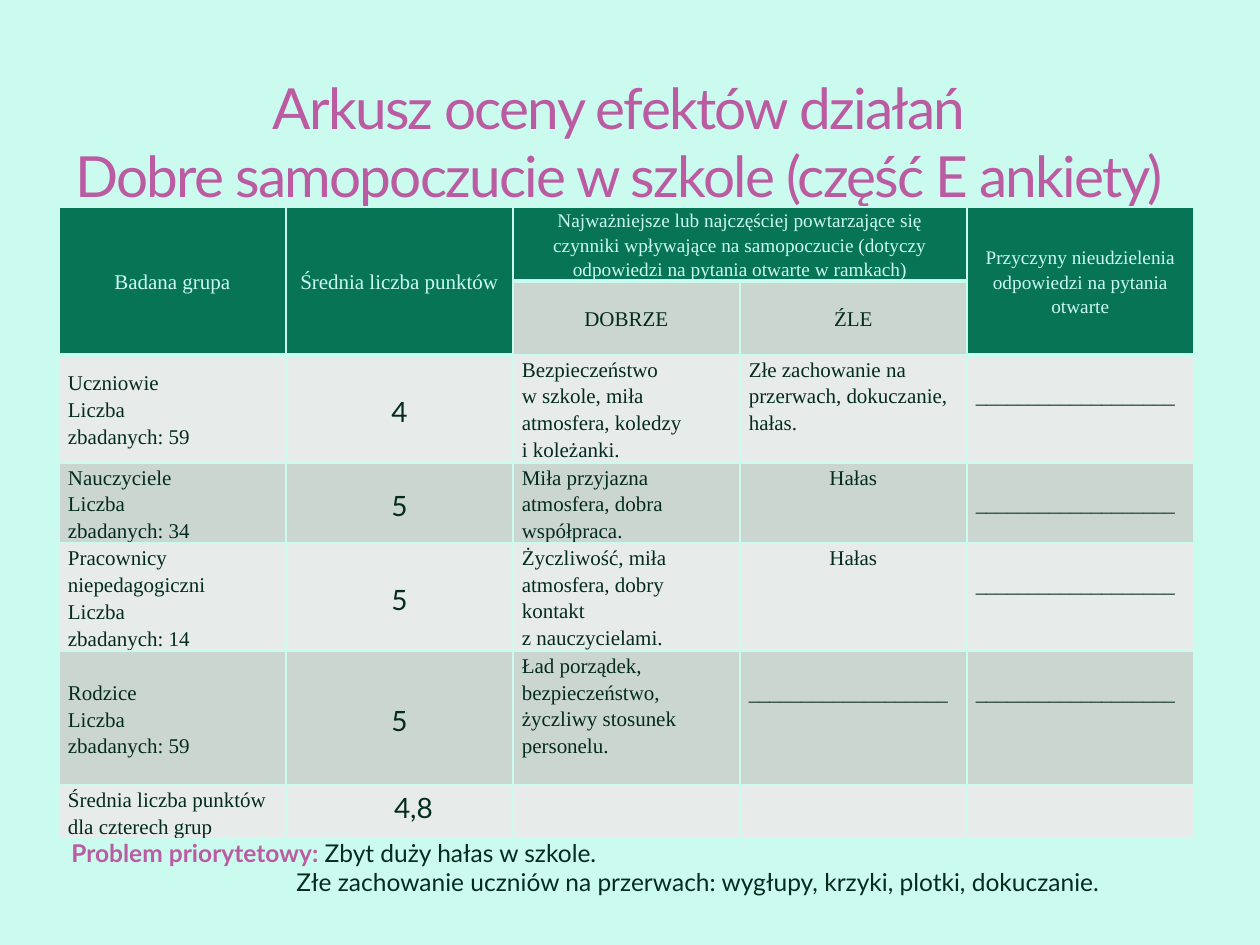
import pptx
import pptx.dml.color
import pptx.enum.text
import pptx.oxml
import pptx.oxml.ns
import pptx.util

RGBColor = pptx.dml.color.RGBColor
PP_ALIGN = pptx.enum.text.PP_ALIGN
MSO_ANCHOR = pptx.enum.text.MSO_ANCHOR
Pt = pptx.util.Pt

MINT = RGBColor(0xCB, 0xFB, 0xEE)
GREEN = RGBColor(0x08, 0x74, 0x56)
INK = RGBColor(0x03, 0x2B, 0x1F)
PINK = RGBColor(0xBB, 0x5B, 0xA2)
LIGHT = RGBColor(0xE7, 0xEB, 0xE9)
DARK = RGBColor(0xCC, 0xD6, 0xD1)

SERIF = "Times New Roman"
SANS = "Lato"
EMU_PER_PX = 914400 // 126

COLUMN_WIDTH = 227
ROW_HEIGHTS = [73, 74, 108, 80, 108, 134, 54]
CELL_INSET = 9
LINE_HEIGHT = 27
NO_ANSWER = "_" * 19

SURVEY = [
    ("Uczniowie\vLiczba\vzbadanych: 59", "4",
     "Bezpieczeństwo\vw szkole, miła atmosfera, koledzy\vi koleżanki.",
     "Złe zachowanie na przerwach, dokuczanie, hałas."),
    ("Nauczyciele\vLiczba\vzbadanych: 34", "5",
     "Miła przyjazna atmosfera, dobra współpraca.", "Hałas"),
    ("Pracownicy niepedagogiczni\vLiczba\vzbadanych: 14", "5",
     "Życzliwość, miła atmosfera, dobry kontakt\vz nauczycielami.", "Hałas"),
    ("Rodzice\vLiczba\vzbadanych: 59", "5",
     "Ład porządek, bezpieczeństwo, życzliwy stosunek personelu.", NO_ANSWER),
]


def px(length):
    return pptx.util.Emu(length * EMU_PER_PX)


def add_title(slide, text):
    title = slide.shapes.title
    title.left, title.top, title.width, title.height = px(59), px(49), px(1134), px(160)
    frame = title.text_frame
    frame.word_wrap = True
    frame.auto_size = pptx.enum.text.MSO_AUTO_SIZE.NONE
    frame.vertical_anchor = MSO_ANCHOR.BOTTOM
    frame.margin_left = frame.margin_top = frame.margin_bottom = 0
    frame.margin_right = px(14)
    heading = frame.paragraphs[0]
    heading.text = text
    heading.alignment = PP_ALIGN.CENTER
    heading.font.name = SANS
    heading.font.size = Pt(32.4)
    heading.font.color.rgb = PINK
    for run in heading.runs:
        run.font._element.set("spc", "-100")


def set_borders(cell, bottom=1):
    properties = cell._tc.get_or_add_tcPr()
    sides = [("lnL", 1), ("lnR", 1), ("lnT", 1), ("lnB", bottom)]
    for position, (side, points) in enumerate(sides):
        properties.insert(position, pptx.oxml.parse_xml(
            f'<a:{side} {pptx.oxml.ns.nsdecls("a")} w="{Pt(points)}">'
            f'<a:solidFill><a:srgbClr val="{MINT}"/></a:solidFill></a:{side}>'))


def fill_cell(cell, color):
    cell.fill.solid()
    cell.fill.fore_color.rgb = color
    cell.margin_left = cell.margin_right = px(CELL_INSET)
    cell.margin_top = cell.margin_bottom = 0


def write_cell(cell, text, size=12, font=SERIF, color=INK,
               align=PP_ALIGN.LEFT, anchor=MSO_ANCHOR.MIDDLE):
    cell.vertical_anchor = anchor
    entry = cell.text_frame.paragraphs[0]
    entry.text = text
    entry.alignment = align
    entry.line_spacing = 1.15
    entry.space_after = Pt(10)
    entry.font.name = font
    entry.font.size = Pt(size)
    for run in entry.runs:
        run.font.color.rgb = color


def write_factor(cell, text):
    centered = text == "Hałas"
    write_cell(cell, text, align=PP_ALIGN.CENTER if centered else PP_ALIGN.LEFT,
               anchor=MSO_ANCHOR.TOP)
    if text == NO_ANSWER:
        cell.margin_top = px(LINE_HEIGHT)


def write_header(table):
    headings = [
        (0, "Badana grupa", 12),
        (1, "Średnia liczba punktów", 12),
        (2, "Najważniejsze lub najczęściej powtarzające się czynniki wpływające "
            "na samopoczucie (dotyczy odpowiedzi na pytania otwarte w ramkach)", 11),
        (4, "Przyczyny nieudzielenia odpowiedzi na pytania otwarte", 11),
    ]
    for column, text, size in headings:
        write_cell(table.cell(0, column), text, size, color=MINT, align=PP_ALIGN.CENTER)
    for column, text in [(2, "DOBRZE"), (3, "ŹLE")]:
        write_cell(table.cell(1, column), text, align=PP_ALIGN.CENTER)
    for column in (0, 1, 4):
        table.cell(0, column).merge(table.cell(1, column))
    table.cell(0, 2).merge(table.cell(0, 3))


def write_summary(table):
    row = len(ROW_HEIGHTS) - 1
    write_cell(table.cell(row, 0), "Średnia liczba punktów dla czterech grup")
    average = table.cell(row, 1)
    write_cell(average, "4,8", 16, SANS, align=PP_ALIGN.CENTER, anchor=MSO_ANCHOR.TOP)
    average.text_frame.paragraphs[0].line_spacing = 1
    average.margin_left = px(CELL_INSET + 28)
    average.margin_top = px(6)


def add_survey_table(slide):
    columns = 5
    table = slide.shapes.add_table(
        len(ROW_HEIGHTS), columns, px(59), px(207),
        px(COLUMN_WIDTH * columns), px(sum(ROW_HEIGHTS))).table
    table.first_row = table.horz_banding = False
    for column in table.columns:
        column.width = px(COLUMN_WIDTH)
    for row, height in enumerate(ROW_HEIGHTS):
        table.rows[row].height = px(height)
        for column in range(columns):
            heading = row == 0 or (row == 1 and column not in (2, 3))
            band = DARK if row % 2 else LIGHT
            fill_cell(table.cell(row, column), GREEN if heading else band)
            set_borders(table.cell(row, column), 3 if heading else 1)
    write_header(table)
    for row, (group, points, good, bad) in enumerate(SURVEY, start=2):
        write_cell(table.cell(row, 0), group)
        write_cell(table.cell(row, 1), points, 16, SANS, align=PP_ALIGN.CENTER)
        for column, text in enumerate([good, bad, NO_ANSWER], start=2):
            write_factor(table.cell(row, column), text)
    write_summary(table)


def add_priority_problem(slide):
    frame = slide.shapes.add_textbox(px(59), px(838), px(1131), px(60)).text_frame
    frame.word_wrap = True
    frame.margin_top = frame.margin_bottom = 0
    problem = frame.paragraphs[0]
    label = problem.add_run()
    label.text = "Problem priorytetowy: "
    label.font.bold = True
    label.font.color.rgb = PINK
    problem.add_run().text = "Zbyt duży hałas w szkole."
    behaviour = frame.add_paragraph()
    behaviour.text = ("Złe zachowanie uczniów na przerwach: "
                      "wygłupy, krzyki, plotki, dokuczanie.")
    behaviour._p.get_or_add_pPr().set("marL", str(px(225)))
    for line in frame.paragraphs:
        line.font.name = SANS
        line.font.size = Pt(14)
        line.font.color.rgb = INK


def main():
    presentation = pptx.Presentation()
    presentation.slide_width = px(1260)
    presentation.slide_height = px(945)
    slide = presentation.slides.add_slide(presentation.slide_layouts[5])
    slide.background.fill.solid()
    slide.background.fill.fore_color.rgb = MINT
    add_survey_table(slide)
    add_title(slide, "Arkusz oceny efektów działań\v"
                     "Dobre samopoczucie w szkole (część E ankiety)")
    add_priority_problem(slide)
    presentation.save("out.pptx")


if __name__ == "__main__":
    main()
